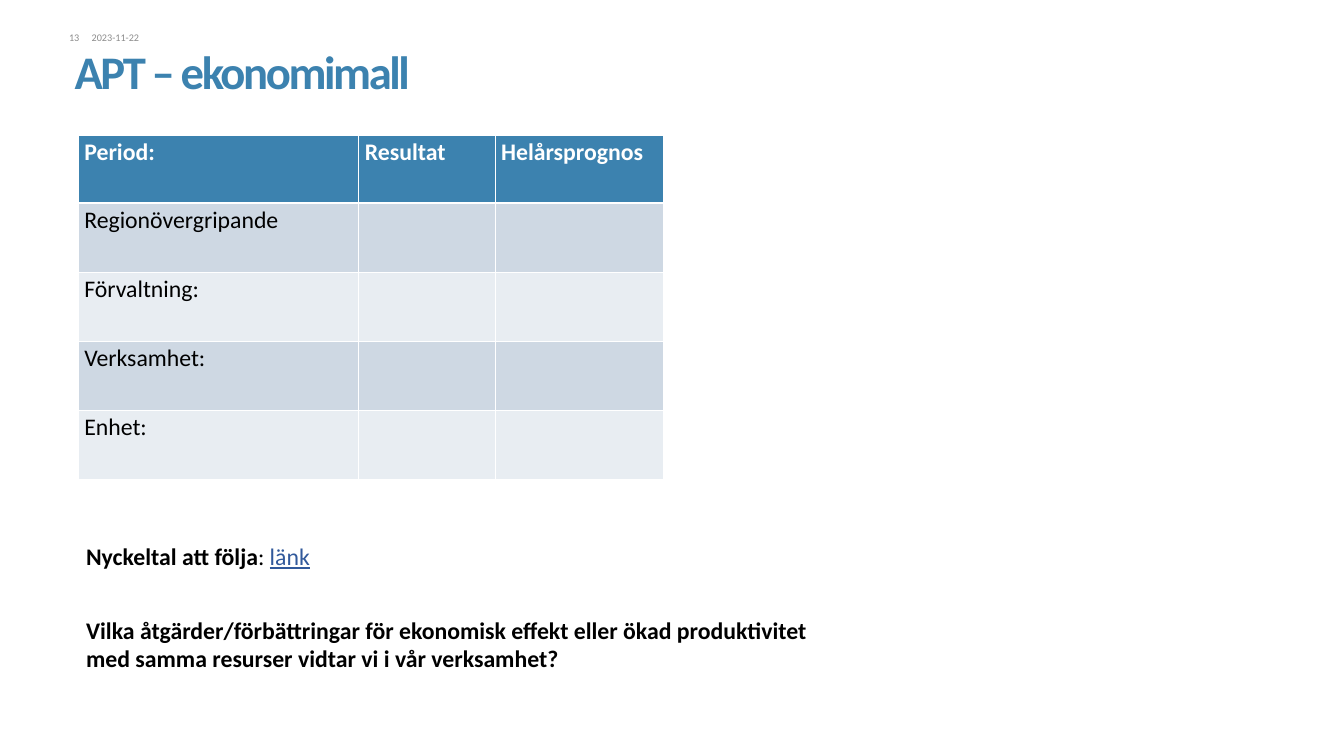
"""Builds the APT economy template slide with its results table and follow-up questions."""
import pptx
import pptx.dml.color
import pptx.enum.text
import pptx.oxml
import pptx.util
from pptx.util import Cm

THEME = {
    "font": "Calibri",
    "blue": "3C82AF", "band_dark": "CED8E3", "band_light": "E8EDF2",
    "white": "FFFFFF", "black": "000000", "grey": "8C8C8C", "link": "31599B",
    "title": 55, "body": 28, "small": 12,
}
LEFT = pptx.enum.text.PP_ALIGN.LEFT
RIGHT = pptx.enum.text.PP_ALIGN.RIGHT


def add_run(paragraph, text, size, color, **formats):
    run = paragraph.add_run()
    run.text = text
    run.font.color.rgb = pptx.dml.color.RGBColor.from_string(THEME[color])
    settings = {"name": THEME["font"], "size": pptx.util.Pt(THEME[size]), "bold": False}
    for attribute, value in {**settings, **formats}.items():
        setattr(run.font, attribute, value)
    return run


def add_border(cell, side, points):
    cell._tc.get_or_add_tcPr().append(pptx.oxml.parse_xml(
        f'<a:{side} xmlns:a="http://schemas.openxmlformats.org/drawingml/2006/main" '
        f'w="{pptx.util.Pt(points)}"><a:solidFill><a:srgbClr val="{THEME["white"]}"/>'
        f'</a:solidFill></a:{side}>'))


deck = pptx.Presentation()
deck.slide_width, deck.slide_height = Cm(55.85), Cm(31.42)
slide = deck.slides.add_slide(deck.slide_layouts[5])

heading = slide.shapes.title
heading_format = {"left": Cm(3.1), "top": Cm(1.12), "width": Cm(48.95), "height": Cm(3.2)}
for attribute, value in heading_format.items():
    setattr(heading, attribute, value)
frame_format = {
    "margin_left": 0, "margin_top": 0, "margin_right": 0, "margin_bottom": Cm(0.2),
    "vertical_anchor": pptx.enum.text.MSO_ANCHOR.BOTTOM, "word_wrap": True,
    "auto_size": pptx.enum.text.MSO_AUTO_SIZE.NONE,
}
for attribute, value in frame_format.items():
    setattr(heading.text_frame, attribute, value)
heading_line = heading.text_frame.paragraphs[0]
heading_line.alignment = LEFT
heading_line.line_spacing = 0.85
heading_run = add_run(heading_line, "APT – ekonomimall", "title", "blue", bold=True)
heading_run._r.get_or_add_rPr().set("spc", "-280")

for text, left, width, alignment in [
    ("2023-11-22", 3.81, 2.21, LEFT),
    ("13", 2.31, 0.99, RIGHT),
]:
    marker = slide.shapes.add_textbox(Cm(left), Cm(1.32), Cm(width), Cm(0.51)).text_frame
    marker.word_wrap = True
    for margin in ("margin_left", "margin_top", "margin_right", "margin_bottom"):
        setattr(marker, margin, 0)
    marker.paragraphs[0].alignment = alignment
    add_run(marker.paragraphs[0], text, "small", "grey")

results = [
    ("Period:", "Resultat", "Helårsprognos"),
    ("Regionövergripande", "", ""),
    ("Förvaltning:", "", ""),
    ("Verksamhet:", "", ""),
    ("Enhet:", "", ""),
]
column_widths = [11.66, 5.66, 7.01]
header_height, row_height = 2.82, 2.87
table = slide.shapes.add_table(
    len(results), len(column_widths), Cm(3.25), Cm(5.61),
    Cm(sum(column_widths)), Cm(header_height + 4 * row_height)).table
for column, width in zip(table.columns, column_widths):
    column.width = Cm(width)
for row_index, labels in enumerate(results):
    is_header = row_index == 0
    table.rows[row_index].height = Cm(header_height if is_header else row_height)
    band = "blue" if is_header else "band_dark" if row_index % 2 else "band_light"
    for column_index, label in enumerate(labels):
        cell = table.cell(row_index, column_index)
        for side in ("lnL", "lnR", "lnT", "lnB"):
            header_rule = (side == "lnB" and is_header) or (side == "lnT" and row_index == 1)
            add_border(cell, side, 3 if header_rule else 1)
        cell.fill.solid()
        cell.fill.fore_color.rgb = pptx.dml.color.RGBColor.from_string(THEME[band])
        if label:
            add_run(cell.text_frame.paragraphs[0], label, "body",
                    "white" if is_header else "black", bold=is_header)

question = ("Vilka åtgärder/förbättringar för ekonomisk effekt eller ökad produktivitet "
            "med samma resurser vidtar vi i vår verksamhet?")
for top, height, pieces in [
    (25.45, 2.64, [(question, "black", {"bold": True})]),
    (22.4, 1.45, [("Nyckeltal att följa", "black", {"bold": True}),
                  (": ", "black", {}),
                  ("länk", "link", {"underline": True})]),
]:
    follow_up = slide.shapes.add_textbox(Cm(3.33), Cm(top), Cm(31.37), Cm(height)).text_frame
    follow_up.word_wrap = True
    for text, color, formats in pieces:
        add_run(follow_up.paragraphs[0], text, "body", color, **formats)

deck.save("out.pptx")
